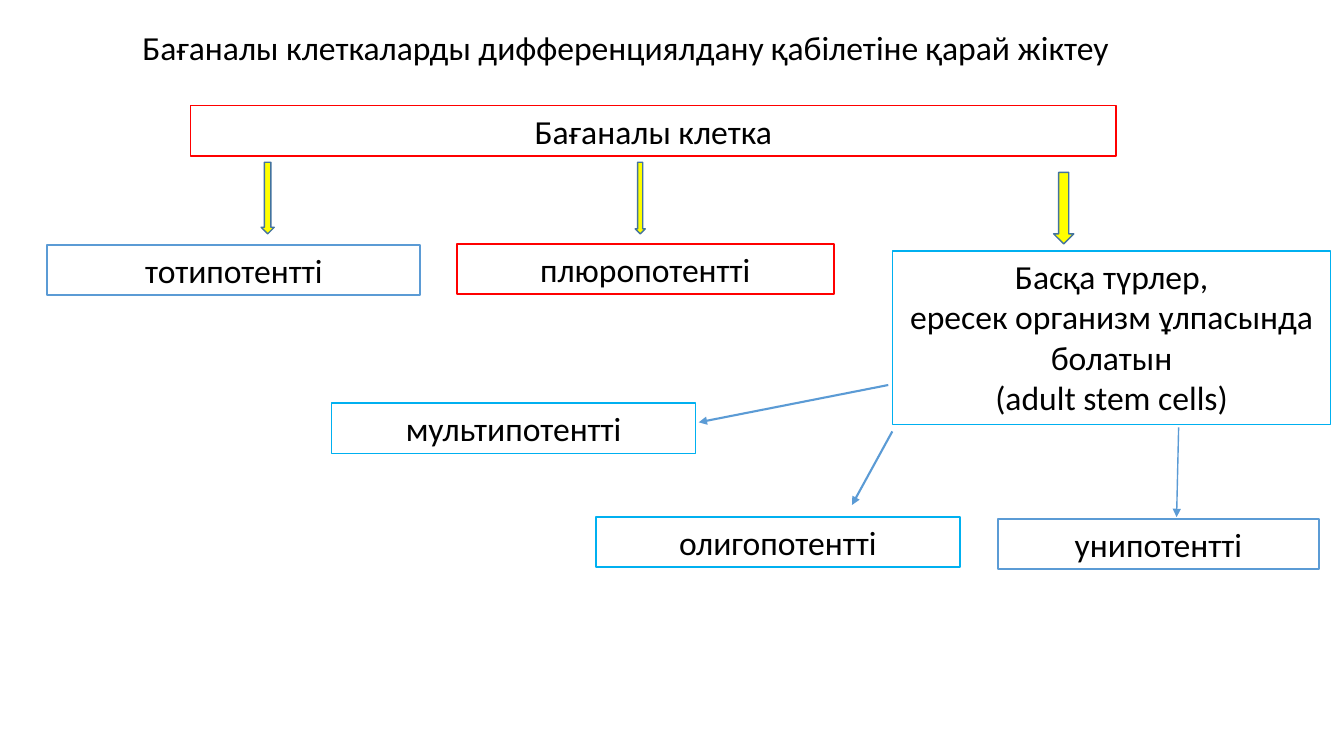
from lxml import etree
from pptx import Presentation
from pptx.dml.color import RGBColor
from pptx.enum.shapes import MSO_CONNECTOR, MSO_SHAPE
from pptx.enum.text import MSO_ANCHOR, PP_ALIGN
from pptx.oxml.ns import qn
from pptx.util import Pt

PX = 9144  # 100 px to the inch
RECTANGLE = MSO_SHAPE.RECTANGLE
DOWN_ARROW = MSO_SHAPE.DOWN_ARROW
STRAIGHT = MSO_CONNECTOR.STRAIGHT
TOP = MSO_ANCHOR.TOP
CENTER = PP_ALIGN.CENTER

BLACK, RED, YELLOW = "000000", "FF0000", "FFFF00"
BLUE, CYAN, DARK_BLUE = "5B9BD5", "00B0F0", "43739E"

TITLE = "Бағаналы клеткаларды дифференциялдану қабілетіне қарай жіктеу"

# left, top, width, height, line colour, line width, paragraphs
CELL_TYPES = [
    (189, 105, 918, 50, RED, 1, ["Бағаналы клетка"]),
    (329, 400, 361, 50, CYAN, 1, ["мультипотентті"]),
    (990, 515, 318, 50, BLUE, 1.5, ["унипотентті"]),
    (885, 249, 435, 172, CYAN, 0.75,
     ["Басқа түрлер,", "ересек организм ұлпасында болатын", "(adult stem cells)"]),
    (453, 242, 374, 50, RED, 1.5, ["плюропотентті"]),
    (47, 243, 370, 50, BLUE, 1.5, ["тотипотентті"]),
    (591, 513, 361, 50, CYAN, 1.5, ["олигопотентті"]),
]

# left, top, width
BLOCK_ARROWS = [(630, 161, 10), (259, 161, 13), (1045, 171, 20)]
BLOCK_ARROW_HEIGHT = 71

# start x, start y, end x, end y, line width
THIN_ARROWS = [
    (881, 382, 693, 419, 1.5),
    (1169, 424, 1167, 513, 1),
    (885, 428, 845, 501, 1.5),
]


def scaled(*lengths):
    return [length * PX for length in lengths]


def color(hex_value):
    return RGBColor.from_string(hex_value)


def set_line(line, hex_value, width):
    line.color.rgb = color(hex_value)
    line.width = Pt(width)


def write_text(shape, lines):
    frame = shape.text_frame
    frame.word_wrap = True
    frame.vertical_anchor = TOP
    frame.text = "\n".join(lines)
    for paragraph in frame.paragraphs:
        paragraph.alignment = CENTER
        paragraph.font.name = "Calibri"
        paragraph.font.size = Pt(24)
        paragraph.font.color.rgb = color(BLACK)


def add_title(slide):
    title = slide.shapes.add_textbox(*scaled(16, 26, 1209, 48))
    write_text(title, [TITLE])
    title.text_frame.paragraphs[0].line_spacing = 0.9


def add_cell_box(slide, left, top, width, height, line_color, line_width, lines):
    box = slide.shapes.add_shape(RECTANGLE, *scaled(left, top, width, height))
    box.shadow.inherit = False
    box.fill.background()
    set_line(box.line, line_color, line_width)
    write_text(box, lines)


def add_block_arrow(slide, left, top, width):
    arrow = slide.shapes.add_shape(
        DOWN_ARROW, *scaled(left, top, width, BLOCK_ARROW_HEIGHT))
    arrow.shadow.inherit = False
    arrow.fill.solid()
    arrow.fill.fore_color.rgb = color(YELLOW)
    set_line(arrow.line, DARK_BLUE, 1)


def add_thin_arrow(slide, start_x, start_y, end_x, end_y, width):
    connector = slide.shapes.add_connector(
        STRAIGHT, *scaled(start_x, start_y, end_x, end_y))
    set_line(connector.line, BLUE, width)
    properties = connector._element.spPr
    line = properties.find(qn("a:ln"))
    etree.SubElement(line, qn("a:tailEnd"), type="triangle")
    etree.SubElement(properties, qn("a:effectLst"))


def main():
    presentation = Presentation()
    presentation.slide_width, presentation.slide_height = scaled(1333, 750)
    slide = presentation.slides.add_slide(presentation.slide_layouts[6])
    add_title(slide)
    for cell_type in CELL_TYPES:
        add_cell_box(slide, *cell_type)
    for block_arrow in BLOCK_ARROWS:
        add_block_arrow(slide, *block_arrow)
    for thin_arrow in THIN_ARROWS:
        add_thin_arrow(slide, *thin_arrow)
    presentation.save("out.pptx")


if __name__ == "__main__":
    main()
